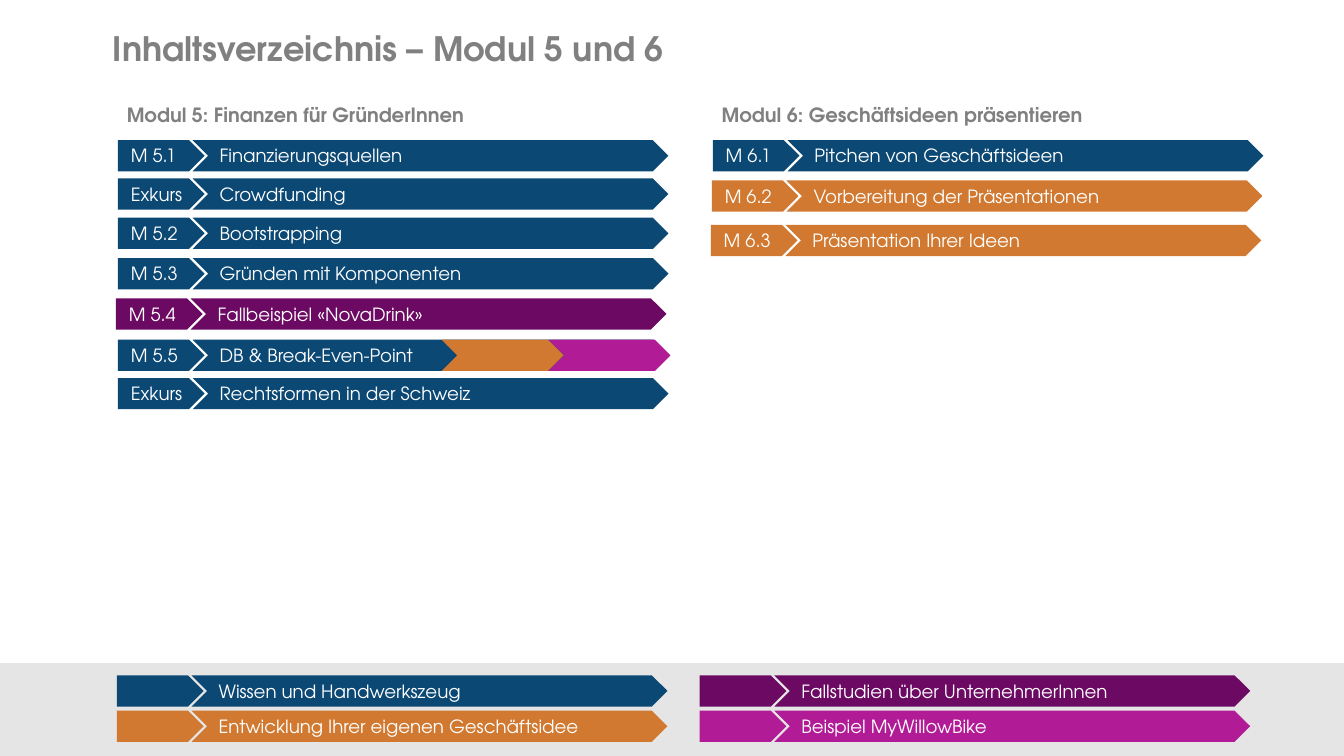
from pptx import Presentation
from pptx.dml.color import RGBColor
from pptx.enum.shapes import MSO_SHAPE as Shape
from pptx.enum.text import MSO_ANCHOR as Anchor, MSO_AUTO_SIZE as AutoSize
from pptx.util import Inches, Pt

COLORS = {
    "knowledge": "0B4874",
    "own_idea": "D17930",
    "case_study": "6C0A63",
    "example": "B11B96",
    "heading": "808080",
    "band": "E5E5E5",
    "white": "FFFFFF",
}
FONT = "TeX Gyre Adventor"
BAR_HEIGHT = 0.31

prs = Presentation()
prs.slide_width, prs.slide_height = Inches(13.33), Inches(7.5)
slide = prs.slides.add_slide(prs.slide_layouts[6])


def add_block(kind, left, top, width, height, color):
    block = slide.shapes.add_shape(kind, Inches(left), Inches(top), Inches(width), Inches(height))
    block.shadow.inherit = False
    block.fill.solid()
    block.fill.fore_color.rgb = RGBColor.from_string(COLORS[color])
    block.line.fill.background()


def add_text(text, left, top, width, height, size, color, heading=False):
    box = slide.shapes.add_textbox(Inches(left), Inches(top), Inches(width), Inches(height))
    frame = box.text_frame
    frame.text = text
    frame.word_wrap = heading
    paragraph = frame.paragraphs[0]
    if heading:
        frame.vertical_anchor = Anchor.MIDDLE
    else:
        frame.auto_size = AutoSize.SHAPE_TO_FIT_TEXT
        paragraph.line_spacing = 0.9
        paragraph.space_after = Pt(10)
    font = paragraph.runs[0].font
    font.name, font.size, font.bold = FONT, Pt(size), heading
    font.color.rgb = RGBColor.from_string(COLORS[color])


# Title and module headings
for text, left, top, width, height, size in [
    ("Inhaltsverzeichnis – Modul 5 und 6", 1.02, 0.12, 10.29, 0.72, 24),
    ("Modul 5: Finanzen für GründerInnen", 1.16, 0.98, 4.17, 0.31, 14),
    ("Modul 6: Geschäftsideen präsentieren", 7.06, 0.98, 4.61, 0.31, 14),
]:
    add_text(text, left, top, width, height, size, "heading", heading=True)

# Footer band behind the legend
add_block(Shape.RECTANGLE, 0, 6.58, 13.33, 0.94, "band")

# Chapters and legend: number, topic, topic width, left, top, colour
entries = [
    ("M 5.1", "Finanzierungsquellen", 2.08, 1.17, 1.39, "knowledge"),
    ("Exkurs", "Crowdfunding", 1.47, 1.17, 1.77, "knowledge"),
    ("M 5.2", "Bootstrapping", 1.44, 1.17, 2.16, "knowledge"),
    ("M 5.3", "Gründen mit Komponenten", 2.64, 1.17, 2.56, "knowledge"),
    ("M 5.4", "Fallbeispiel «NovaDrink»", 2.6, 1.15, 2.96, "case_study"),
    ("M 5.5", "DB & Break-Even-Point", 2.21, 1.17, 3.37, "knowledge"),
    ("Exkurs", "Rechtsformen in der Schweiz", 2.72, 1.17, 3.75, "knowledge"),
    ("M 6.1", "Pitchen von Geschäftsideen", 2.7, 7.07, 1.39, "knowledge"),
    ("M 6.2", "Vorbereitung der Präsentationen", 3.09, 7.06, 1.79, "own_idea"),
    ("M 6.3", "Präsentation Ihrer Ideen", 2.3, 7.05, 2.23, "own_idea"),
    ("", "Wissen und Handwerkszeug", 2.63, 1.16, 6.7, "knowledge"),
    ("", "Entwicklung Ihrer eigenen Geschäftsidee", 3.81, 1.16, 7.05, "own_idea"),
    ("", "Fallstudien über UnternehmerInnen", 3.27, 6.94, 6.7, "case_study"),
    ("", "Beispiel MyWillowBike", 2.28, 6.94, 7.05, "example"),
]
for number, topic, topic_width, left, top, color in entries:
    add_block(Shape.PENTAGON, left, top, 0.86, BAR_HEIGHT, color)
    add_block(Shape.CHEVRON, left + 0.74, top, 4.72, BAR_HEIGHT, color)
    add_text(topic, left + 0.91, top + 0.02, topic_width, 0.3, 13, "white")
    if number:
        number_width = 0.72 if number == "Exkurs" else 0.67
        add_text(number, left + 0.03, top + 0.02, number_width, 0.3, 13, "white")

# Extra segments of chapter 5.5
for left, color in [(5.44, "example"), (4.38, "own_idea")]:
    add_block(Shape.CHEVRON, left, 3.37, 1.21, BAR_HEIGHT, color)

prs.save("out.pptx")
